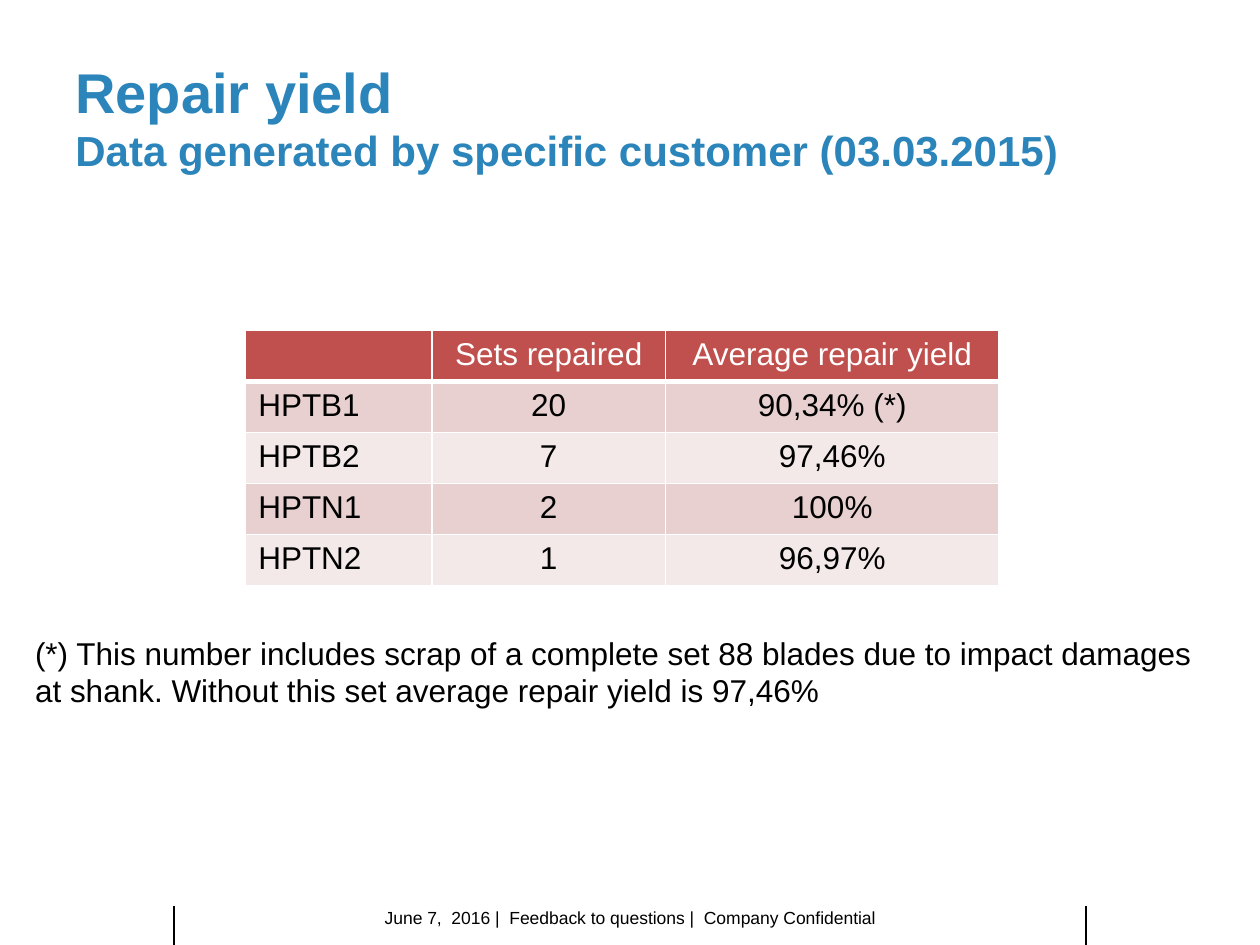
from dataclasses import dataclass

from lxml.etree import SubElement
from pptx import Presentation
from pptx.dml.color import RGBColor
from pptx.enum.shapes import MSO_CONNECTOR
from pptx.enum.text import MSO_ANCHOR, PP_ALIGN
from pptx.oxml.ns import qn
from pptx.util import Inches, Pt


@dataclass(frozen=True)
class Theme:
    """Colours, type sizes and line widths of the slide."""
    font: str = "Arial"
    title: str = "2B85BA"
    text: str = "000000"
    light: str = "FFFFFF"
    header: str = "C0504D"
    bands: tuple = ("E8D0D0", "F4E9E9")
    title_size: int = 32
    subtitle_size: int = 24
    body_size: int = 18
    footer_size: int = 10
    rule_width: float = 0.75
    border_width: int = 1
    header_border_width: int = 3


@dataclass(frozen=True)
class Box:
    """A region in units of a 100-column, 75-row grid."""
    left: float
    top: float
    width: float
    height: float

    def lengths(self):
        """Return left, top, width and height as slide lengths."""
        return [units(value) for value in (self.left, self.top, self.width, self.height)]


THEME = Theme()
COLUMNS, ROWS = 100, 75
YIELD_ROWS = [
    ("", "Sets repaired", "Average repair yield"),
    ("HPTB1", "20", "90,34% (*)"),
    ("HPTB2", "7", "97,46%"),
    ("HPTN1", "2", "100%"),
    ("HPTN2", "1", "96,97%"),
]
YIELD_COLUMNS = (14.8, 18.5, 26.5)


def units(count):
    """Convert grid units to a slide length."""
    return Inches(count * 10 / COLUMNS)


def add_run(paragraph, text, size, color, bold=False):
    """Append one formatted run."""
    run = paragraph.add_run()
    run.text = text
    run.font.name = THEME.font
    run.font.size = Pt(size)
    run.font.bold = bold
    run.font.color.rgb = RGBColor.from_string(color)


def add_text_frame(slide, box):
    """Add a wrapping text box and return its frame."""
    frame = slide.shapes.add_textbox(*box.lengths()).text_frame
    frame.word_wrap = True
    return frame


def add_title(slide, box):
    """Place the title and subtitle in one block."""
    frame = add_text_frame(slide, box)
    frame.vertical_anchor = MSO_ANCHOR.MIDDLE
    paragraph = frame.paragraphs[0]
    add_run(paragraph, "Repair yield", THEME.title_size, THEME.title, bold=True)
    paragraph.add_line_break()
    add_run(paragraph, "Data generated by specific customer (03.03.2015)",
            THEME.subtitle_size, THEME.title, bold=True)


def set_borders(cell, bottom_width):
    """Draw the four cell borders ahead of the cell fill."""
    properties = cell._tc.get_or_add_tcPr()
    for index, side in enumerate(("lnL", "lnR", "lnT", "lnB")):
        width = bottom_width if side == "lnB" else THEME.border_width
        line = SubElement(properties, qn(f"a:{side}"), w=str(Pt(width)))
        fill = SubElement(line, qn("a:solidFill"))
        SubElement(fill, qn("a:srgbClr"), val=THEME.light)
        properties.insert(index, line)


def add_yield_table(slide, box):
    """Place the repair yield table."""
    table = slide.shapes.add_table(len(YIELD_ROWS), len(YIELD_COLUMNS), *box.lengths()).table
    for column, width in zip(table.columns, YIELD_COLUMNS):
        column.width = units(width)
    for row_index, values in enumerate(YIELD_ROWS):
        is_header = row_index == 0
        fill = THEME.header if is_header else THEME.bands[(row_index - 1) % 2]
        color = THEME.light if is_header else THEME.text
        border = THEME.header_border_width if is_header else THEME.border_width
        table.rows[row_index].height = units(box.height / len(YIELD_ROWS))
        for column_index, value in enumerate(values):
            cell = table.cell(row_index, column_index)
            cell.fill.solid()
            cell.fill.fore_color.rgb = RGBColor.from_string(fill)
            set_borders(cell, border)
            paragraph = cell.text_frame.paragraphs[0]
            paragraph.alignment = PP_ALIGN.CENTER if column_index else PP_ALIGN.LEFT
            if value:
                add_run(paragraph, value, THEME.body_size, color)


def add_note(slide, box):
    """Place the note that explains the asterisk."""
    paragraph = add_text_frame(slide, box).paragraphs[0]
    add_run(paragraph, "(*) This number includes scrap of a complete set 88 blades due to "
            "impact damages at shank. Without this set average repair yield is 97,46%",
            THEME.body_size, THEME.text)


def add_footer(slide, box):
    """Place the footer text between two vertical rules."""
    frame = add_text_frame(slide, box)
    frame.margin_left = frame.margin_right = frame.margin_top = frame.margin_bottom = 0
    paragraph = frame.paragraphs[0]
    paragraph.alignment = PP_ALIGN.CENTER
    add_run(paragraph, "June 7,  2016 |  Feedback to questions |  Company Confidential",
            THEME.footer_size, THEME.text)
    for column in (box.left, box.left + box.width):
        rule = slide.shapes.add_connector(
            MSO_CONNECTOR.STRAIGHT, units(column), units(box.top - 0.1), units(column), units(ROWS))
        rule.line.color.rgb = RGBColor.from_string(THEME.text)
        rule.line.width = Pt(THEME.rule_width)
        SubElement(rule._element.spPr, qn("a:effectLst"))


def main():
    """Build and save the slide."""
    presentation = Presentation()
    presentation.slide_width = units(COLUMNS)
    presentation.slide_height = units(ROWS)
    slide = presentation.slides.add_slide(presentation.slide_layouts[6])
    add_footer(slide, Box(13.8, 72, 72.4, 2.1))
    add_title(slide, Box(5, 3, 90, 12.5))
    add_yield_table(slide, Box(19.5, 26.2, sum(YIELD_COLUMNS), 20.3))
    add_note(slide, Box(1.8, 49.8, 94.7, 7.1))
    presentation.save("out.pptx")


if __name__ == "__main__":
    main()
